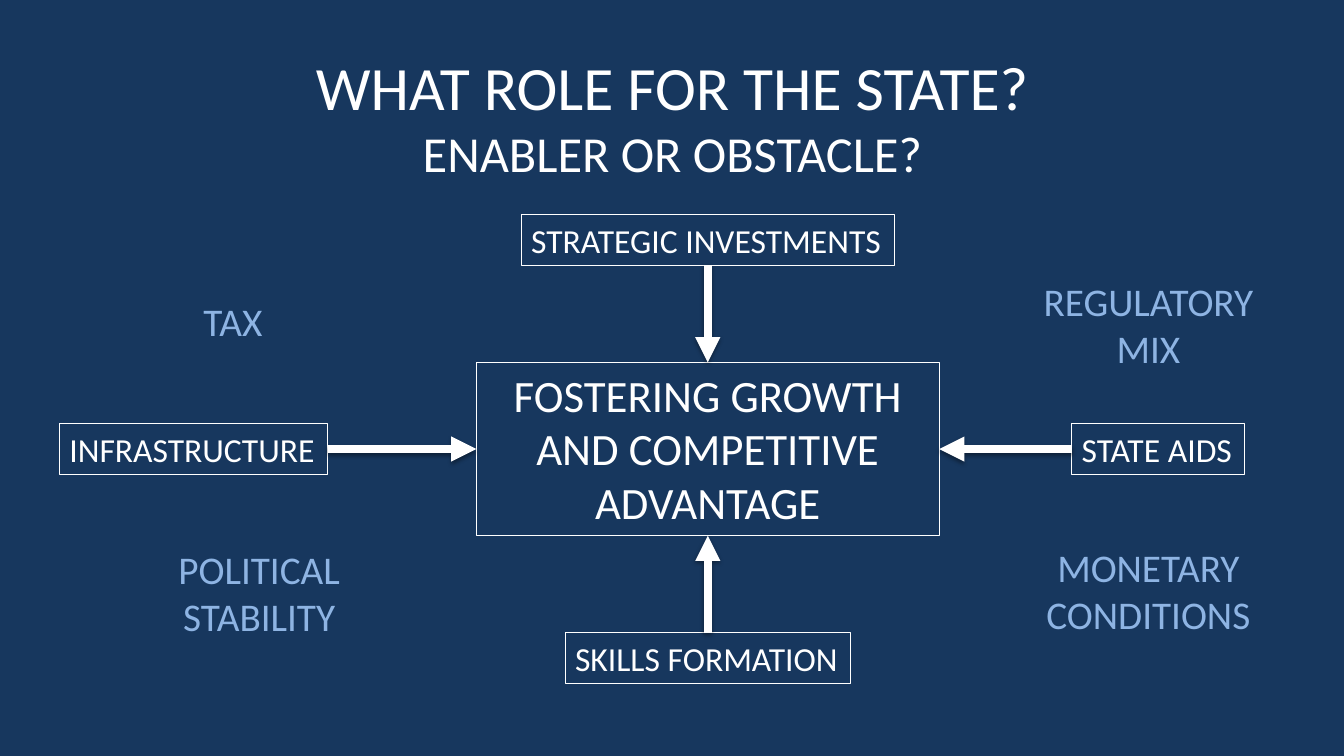
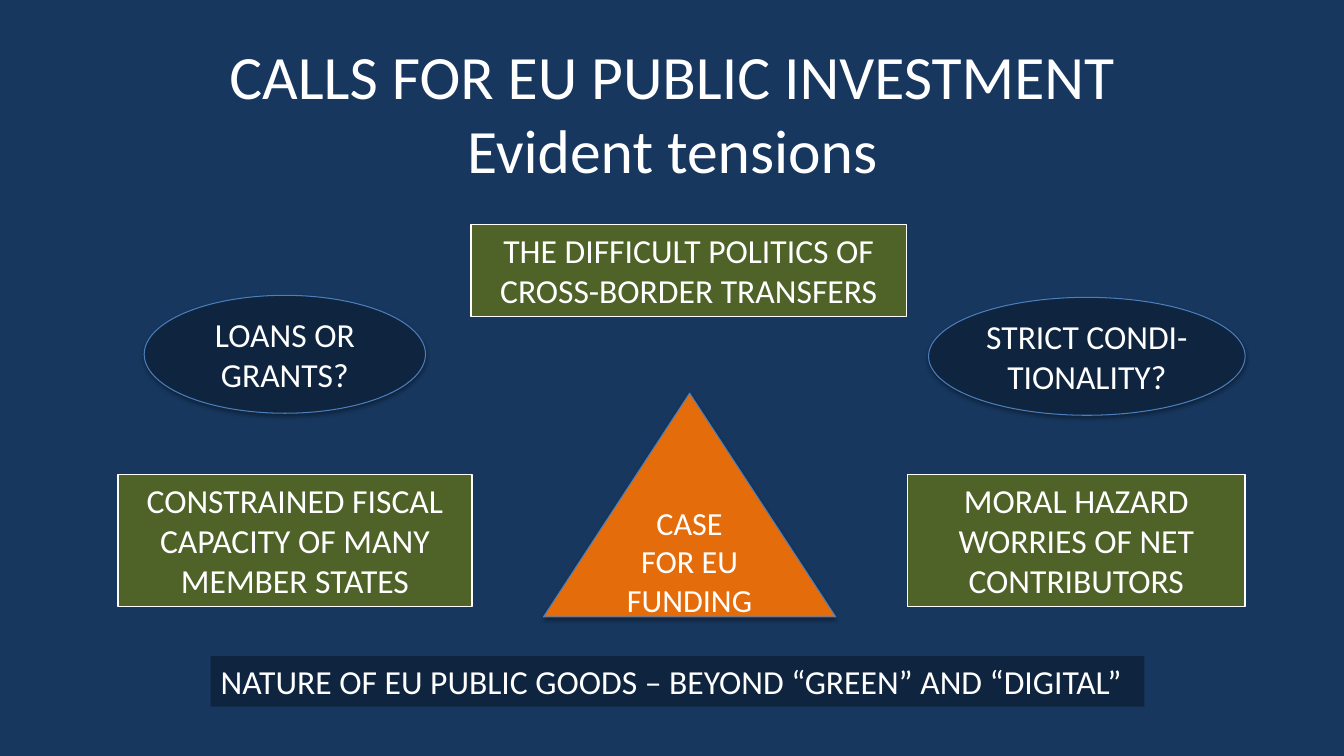
from lxml import etree
from pptx import Presentation
from pptx.dml.color import RGBColor
from pptx.enum.shapes import MSO_CONNECTOR, MSO_SHAPE
from pptx.enum.text import MSO_ANCHOR, PP_ALIGN
from pptx.oxml import parse_xml
from pptx.oxml.ns import nsdecls, qn
from pptx.util import Inches, Pt

RECT, OVAL, TRIANGLE = MSO_SHAPE.RECTANGLE, MSO_SHAPE.OVAL, MSO_SHAPE.ISOSCELES_TRIANGLE
STRAIGHT = MSO_CONNECTOR.STRAIGHT
LEFT, CENTER = PP_ALIGN.LEFT, PP_ALIGN.CENTER
TOP, MIDDLE = MSO_ANCHOR.TOP, MSO_ANCHOR.MIDDLE
SITE_TOP, SITE_LEFT, SITE_BOTTOM, SITE_RIGHT = range(4)

FONT = "Calibri"
COLORS = {
    "background": "17375E",
    "text": "FFFFFF",
    "context": "8EB4E3",
    "tension": "4F6228",
    "case": "E46C0A",
    "dark": "0F243E",
    "outline": "4B7EBC",
}


def color(name):
    return RGBColor.from_string(COLORS[name])


def write(shape, text, size=24, tint="text", align=CENTER, anchor=TOP, wrap=True):
    frame = shape.text_frame
    frame.word_wrap = wrap
    frame.vertical_anchor = anchor
    frame.text = text
    for paragraph in frame.paragraphs:
        paragraph.alignment = align
        font = paragraph.runs[0].font
        font.name, font.size = FONT, Pt(size)
        font.color.rgb = color(tint)


def add_label(slide, box, text, **style):
    label = slide.shapes.add_textbox(*map(Inches, box))
    write(label, text, **style)
    return label


def add_panel(slide, kind, box, text, fill=None, line=None, weight=0.75, **style):
    panel = slide.shapes.add_shape(kind, *map(Inches, box))
    panel.shadow.inherit = False
    if fill:
        panel.fill.solid()
        panel.fill.fore_color.rgb = color(fill)
    else:
        panel.fill.background()
    if line:
        panel.line.color.rgb = color(line)
        panel.line.width = Pt(weight)
    else:
        panel.line.fill.background()
    write(panel, text, **style)
    return panel


def add_shadow(shape, distance, opacity):
    """Replace any effects with a soft shadow falling straight down."""
    properties = shape._element.spPr
    for effects in properties.findall(qn("a:effectLst")):
        properties.remove(effects)
    properties.append(parse_xml(
        f'<a:effectLst {nsdecls("a")}><a:outerShdw blurRad="{Pt(3.1)}" '
        f'dist="{Pt(distance)}" dir="5400000" rotWithShape="0">'
        f'<a:srgbClr val="000000"><a:alpha val="{opacity * 1000}"/></a:srgbClr>'
        f'</a:outerShdw></a:effectLst>'))


def add_arrow(slide, source, source_site, target, target_site):
    arrow = slide.shapes.add_connector(STRAIGHT, 0, 0, 0, 0)
    arrow.begin_connect(source, source_site)
    arrow.end_connect(target, target_site)
    arrow.line.color.rgb = color("text")
    arrow.line.width = Pt(6)
    etree.SubElement(arrow.line._get_or_add_ln(), qn("a:tailEnd"), type="triangle")
    add_shadow(arrow, 1.6, 38)


def add_title(slide, box, heading, subheading, subheading_size=44):
    title = add_label(slide, box, f"{heading}\n{subheading}", size=44, anchor=MIDDLE)
    title.text_frame.paragraphs[1].runs[0].font.size = Pt(subheading_size)


def add_growth_diagram(slide, box):
    """Central goal with a driver pointing at each side of it."""
    left, top, width, height = box
    goal_width, goal_height, driver_height = 4.59, 1.72, 0.5
    center_x, center_y = left + 6.43, top + height / 2
    goal = add_panel(
        slide, RECT,
        (center_x - goal_width / 2, center_y - goal_height / 2, goal_width, goal_height),
        "FOSTERING GROWTH AND COMPETITIVE ADVANTAGE", line="text", size=32)

    side_y = center_y - driver_height / 2
    bottom_y = top + height - driver_height
    drivers = [
        ("INFRASTRUCTURE", left, side_y, 2.66, SITE_RIGHT, SITE_LEFT),
        ("SKILLS FORMATION", center_x - 2.83 / 2, bottom_y, 2.83, SITE_TOP, SITE_BOTTOM),
        ("STATE AIDS", left + width - 1.71, side_y, 1.71, SITE_LEFT, SITE_RIGHT),
        ("STRATEGIC INVESTMENTS", center_x - 3.7 / 2, top, 3.7, SITE_BOTTOM, SITE_TOP),
    ]
    for text, x, y, driver_width, driver_site, goal_site in drivers:
        driver = add_panel(slide, RECT, (x, y, driver_width, driver_height), text,
                           line="text", align=LEFT, wrap=False)
        add_arrow(slide, driver, driver_site, goal, goal_site)


def add_context_labels(slide, box):
    """Conditions in the four corners of the box."""
    left, top, width, height = box
    label_width, label_height = 2.32, 1.04
    right = left + width - label_width
    bottom = top + height - label_height
    for text, x, y in [
        ("TAX", left - 0.26, top + 0.2),
        ("REGULATORY MIX", right, top),
        ("POLITICAL STABILITY", left, bottom),
        ("MONETARY CONDITIONS", right, bottom - 0.02),
    ]:
        add_label(slide, (x, y, label_width, label_height), text, size=28, tint="context")


def add_tensions(slide, box):
    """The case for funding, with the tensions and open questions around it."""
    left, top, width, height = box
    right = left + width
    tension_y = top + 2.48
    for text, x, y, w, h in [
        ("THE DIFFICULT POLITICS OF\nCROSS-BORDER TRANSFERS", left + 3.5, top, 4.32, 0.91),
        ("CONSTRAINED FISCAL CAPACITY OF MANY MEMBER STATES", left, tension_y, 3.51, 1.31),
        ("MORAL HAZARD WORRIES OF NET CONTRIBUTORS", right - 3.35, tension_y, 3.35, 1.31),
    ]:
        add_panel(slide, RECT, (x, y, w, h), text, fill="tension", line="text", weight=1)

    for kind, text, x, y, w, h, fill, size in [
        (TRIANGLE, "CASE FOR EU FUNDING", left + 4.22, top + 1.67, 2.9, 2.22, "case", 23),
        (OVAL, "LOANS OR GRANTS?", left + 0.26, top + 0.7, 2.79, 1.17, "dark", 24),
        (OVAL, "STRICT CONDI-TIONALITY?", right - 3.14, top + 0.72, 3.14, 1.17, "dark", 24),
    ]:
        panel = add_panel(slide, kind, (x, y, w, h), text, fill=fill, line="outline",
                          size=size, anchor=MIDDLE)
        add_shadow(panel, 1.8, 35)

    add_panel(slide, RECT, (left + 0.92, top + height - 0.5, 9.26, 0.5),
              "NATURE OF EU PUBLIC GOODS – BEYOND “GREEN” AND “DIGITAL”",
              fill="dark", align=LEFT)


def build_state_role(slide):
    add_title(slide, (0.67, 0.3, 12, 1.7), "WHAT ROLE FOR THE STATE?",
              "ENABLER OR OBSTACLE?", 36)
    add_growth_diagram(slide, (0.59, 2.13, 11.75, 4.65))
    add_context_labels(slide, (1.41, 2.7, 11.14, 3.7))


def build_public_investment(slide):
    add_title(slide, (0.67, 0.3, 12, 1.62), "CALLS FOR EU PUBLIC INVESTMENT",
              "Evident tensions")
    add_tensions(slide, (1.17, 2.23, 11.18, 4.78))


def main():
    deck = Presentation()
    deck.slide_width, deck.slide_height = Inches(13.33), Inches(7.5)
    background = deck.slide_master.background.fill
    background.solid()
    background.fore_color.rgb = color("background")
    blank = deck.slide_layouts[6]
    for build in (build_state_role, build_public_investment):
        build(deck.slides.add_slide(blank))
    deck.save("out.pptx")


if __name__ == "__main__":
    main()
